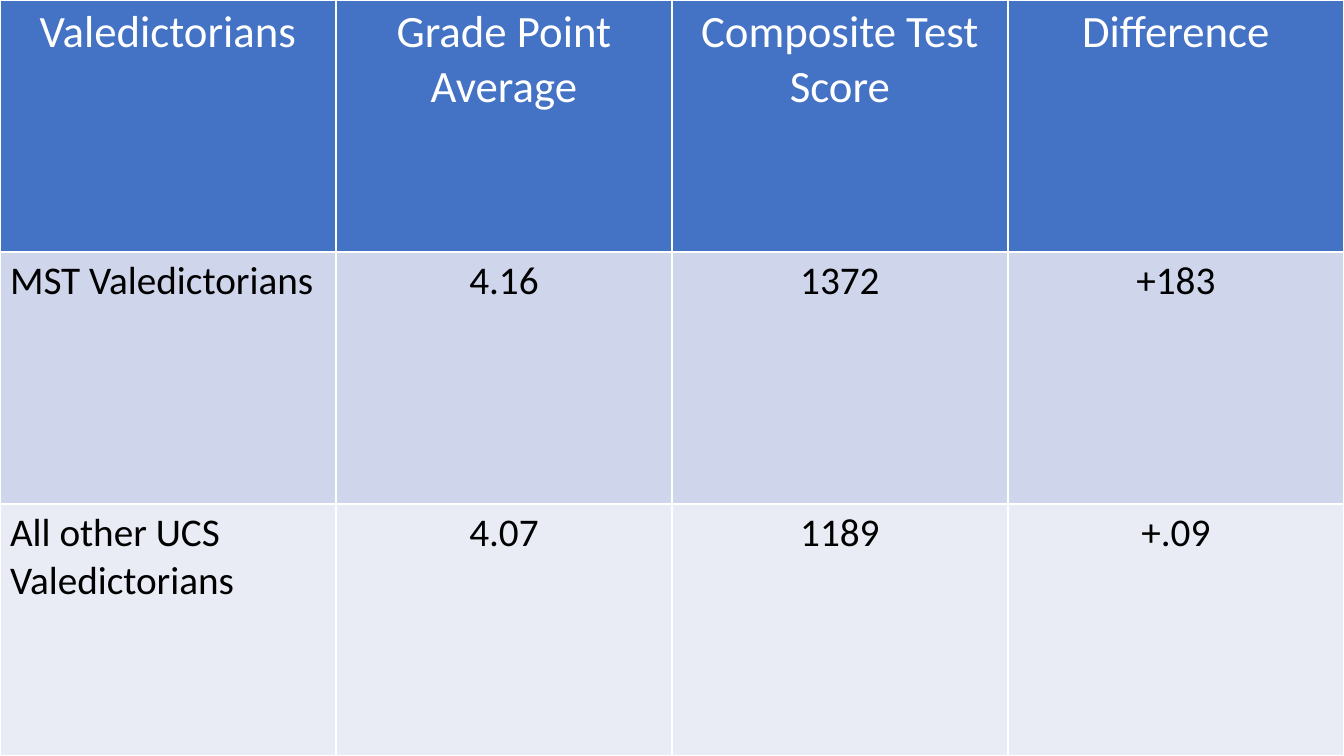
from dataclasses import dataclass

from pptx import Presentation
from pptx.dml.color import RGBColor as Rgb
from pptx.enum.text import PP_ALIGN as Align
from pptx.util import Emu, Pt

SLIDE_WIDTH, SLIDE_HEIGHT = 1344, 756
EMU_PER_PX = 12192000 / SLIDE_WIDTH
BLANK_LAYOUT = 6


@dataclass(frozen=True)
class Theme:
    font: str = "Calibri"
    header_size: int = 32
    body_size: int = 28
    header_fill: str = "4472C4"
    band_fills: tuple = ("CFD5EA", "E9EBF5")
    header_text: str = "FFFFFF"
    body_text: str = "000000"


THEME = Theme()

SCORES = [
    ["Valedictorians", "Grade Point Average", "Composite Test Score", "Difference"],
    ["MST Valedictorians", "4.16", "1372", "+183"],
    ["All other UCS Valedictorians", "4.07", "1189", "+.09"],
]


def px(length):
    return Emu(round(length * EMU_PER_PX))


def style_cell(cell, text, fill, color, size, align):
    cell.fill.solid()
    cell.fill.fore_color.rgb = Rgb.from_string(fill)
    cell.text = text
    para = cell.text_frame.paragraphs[0]
    para.alignment = align
    para.font.name = THEME.font
    para.font.size = Pt(size)
    para.font.bold = False
    para.font.color.rgb = Rgb.from_string(color)


def add_score_table(slide, rows, left, top, width, height):
    # The default table style supplies the white rules between cells
    row_count, column_count = len(rows), len(rows[0])
    table = slide.shapes.add_table(
        row_count, column_count, px(left), px(top), px(width), px(height)
    ).table
    for column in table.columns:
        column.width = px(width / column_count)
    for row in table.rows:
        row.height = px(height / row_count)

    for row_index, texts in enumerate(rows):
        is_header = row_index == 0
        if is_header:
            look = THEME.header_fill, THEME.header_text, THEME.header_size
        else:
            band = THEME.band_fills[(row_index - 1) % len(THEME.band_fills)]
            look = band, THEME.body_text, THEME.body_size
        for column_index, text in enumerate(texts):
            is_label = column_index == 0 and not is_header
            align = Align.LEFT if is_label else Align.CENTER
            style_cell(table.cell(row_index, column_index), text, *look, align)


def main():
    deck = Presentation()
    deck.slide_width, deck.slide_height = px(SLIDE_WIDTH), px(SLIDE_HEIGHT)
    slide = deck.slides.add_slide(deck.slide_layouts[BLANK_LAYOUT])

    # Full-slide comparison table
    add_score_table(slide, SCORES, 0, 0, SLIDE_WIDTH, SLIDE_HEIGHT)
    deck.save("out.pptx")


if __name__ == "__main__":
    main()
